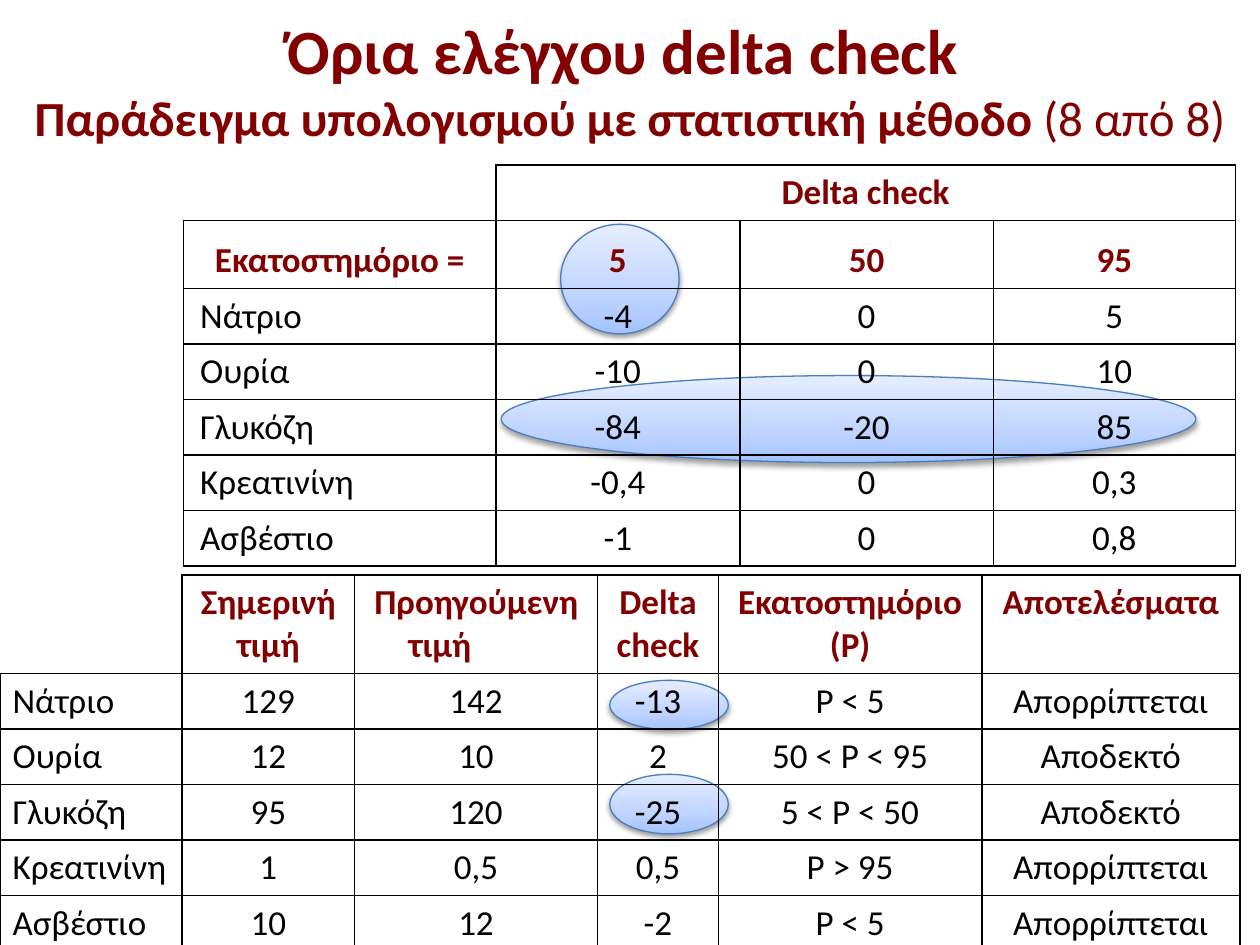
from dataclasses import dataclass

from lxml.etree import SubElement
from pptx import Presentation
from pptx.dml.color import RGBColor
from pptx.enum.shapes import MSO_SHAPE
from pptx.enum.text import MSO_ANCHOR, MSO_AUTO_SIZE, PP_ALIGN
from pptx.oxml import parse_xml
from pptx.oxml.ns import nsdecls, qn
from pptx.util import Pt


@dataclass(frozen=True)
class Theme:
    font: str = "Calibri"
    heading: str = "820000"
    text: str = "000000"
    border: str = "000000"
    outline: str = "4B7EBC"
    gradient: tuple = ((0, "A4C4FF"), (35, "BFD4FF"), (100, "E6EEFF"))
    title_size: int = 36
    subtitle_size: int = 28
    table_size: int = 20


class SlideBuilder:
    def __init__(self, slide, theme):
        self.slide = slide
        self.theme = theme

    def style(self, font, size, color, bold):
        font.name = self.theme.font
        font.size = Pt(size)
        font.bold = bold
        font.color.rgb = RGBColor.from_string(color)

    def title(self, left, top, width, height, heading, subtitle, counter):
        shape = self.slide.shapes.title
        shape.left, shape.top = Pt(left), Pt(top)
        shape.width, shape.height = Pt(width), Pt(height)
        frame = shape.text_frame
        frame.auto_size = MSO_AUTO_SIZE.NONE
        frame.vertical_anchor = MSO_ANCHOR.MIDDLE
        paragraph = frame.paragraphs[0]
        paragraph.alignment = PP_ALIGN.CENTER
        theme = self.theme
        for text, size, bold in ((heading, theme.title_size, True),
                                 (subtitle, theme.subtitle_size, True),
                                 (counter, theme.subtitle_size, False)):
            run = paragraph.add_run()
            run.text = text
            self.style(run.font, size, theme.heading, bold)
            if text == heading:
                paragraph.add_line_break()

    def highlight(self, left, top, width, height):
        """Add an ellipse with a vertical gradient and a soft shadow."""
        shape = self.slide.shapes.add_shape(
            MSO_SHAPE.OVAL, Pt(left), Pt(top), Pt(width), Pt(height))
        stops = "".join(
            f'<a:gs pos="{position * 1000}"><a:srgbClr val="{color}"/></a:gs>'
            for position, color in self.theme.gradient)
        properties = shape._element.spPr
        properties.find(qn("a:prstGeom")).addnext(parse_xml(
            f'<a:gradFill {nsdecls("a")} rotWithShape="1"><a:gsLst>{stops}</a:gsLst>'
            '<a:lin ang="16200000" scaled="0"/></a:gradFill>'))
        shape.line.color.rgb = RGBColor.from_string(self.theme.outline)
        shape.line.width = Pt(0.75)
        properties.append(parse_xml(
            f'<a:effectLst {nsdecls("a")}><a:outerShdw blurRad="{Pt(3.1)}" '
            f'dist="{Pt(1.6)}" dir="5400000" rotWithShape="0"><a:srgbClr val="000000">'
            '<a:alpha val="38000"/></a:srgbClr></a:outerShdw></a:effectLst>'))

    def borders(self, cell, hidden=()):
        properties = cell._tc.get_or_add_tcPr()
        for index, side in enumerate(("lnL", "lnR", "lnT", "lnB")):
            line = SubElement(properties, qn(f"a:{side}"), w=str(Pt(1)))
            if side in hidden:
                SubElement(line, qn("a:noFill"))
            else:
                fill = SubElement(line, qn("a:solidFill"))
                SubElement(fill, qn("a:srgbClr"), val=self.theme.border)
            properties.insert(index, line)

    def table(self, left, top, widths, heights, rows, header_rows, margin):
        """Add a grid whose top left corner cell is open and whose labels are in column one."""
        table = self.slide.shapes.add_table(
            len(rows), len(widths), Pt(left), Pt(top),
            Pt(sum(widths)), Pt(sum(heights))).table
        table.first_row = table.horz_banding = False
        for column, width in zip(table.columns, widths):
            column.width = Pt(width)
        for row, height in zip(table.rows, heights):
            row.height = Pt(height)
        for row_index, values in enumerate(rows):
            header = row_index < header_rows
            color = self.theme.heading if header else self.theme.text
            for column_index, value in enumerate(values):
                cell = table.cell(row_index, column_index)
                cell.fill.background()
                corner = row_index == column_index == 0
                self.borders(cell, ("lnL", "lnT") if corner else ())
                cell.margin_left = cell.margin_right = Pt(margin)
                cell.vertical_anchor = MSO_ANCHOR.BOTTOM
                cell.text_frame.text = value
                paragraph = cell.text_frame.paragraphs[0]
                label = column_index == 0 and not header
                paragraph.alignment = PP_ALIGN.LEFT if label else PP_ALIGN.CENTER
                self.style(paragraph.font, self.theme.table_size, color, header)
                for run in paragraph.runs:
                    self.style(run.font, self.theme.table_size, color, header)
        return table


def hang_second_line(cell, first, second):
    """Left-align a wrapped cell with separate starts for its two lines."""
    paragraph = cell.text_frame.paragraphs[0]
    paragraph.alignment = PP_ALIGN.LEFT
    properties = paragraph._p.get_or_add_pPr()
    properties.set("marL", str(Pt(second)))
    properties.set("indent", str(Pt(first - second)))


LIMITS = [
    ["", "Delta check", "", ""],
    ["Εκατοστημόριο =", "5", "50", "95"],
    ["Νάτριο", "-4", "0", "5"],
    ["Ουρία", "-10", "0", "10"],
    ["Γλυκόζη", "-84", "-20", "85"],
    ["Κρεατινίνη", "-0,4", "0", "0,3"],
    ["Ασβέστιο", "-1", "0", "0,8"],
]
RESULTS = [
    ["", "Σημερινή τιμή", "Προηγούμενη τιμή", "Delta check",
     "Εκατοστημόριο (P)", "Αποτελέσματα"],
    ["Νάτριο", "129", "142", "-13", "P < 5", "Απορρίπτεται"],
    ["Ουρία", "12", "10", "2", "50 < P < 95", "Αποδεκτό"],
    ["Γλυκόζη", "95", "120", "-25", "5 < P < 50", "Αποδεκτό"],
    ["Κρεατινίνη", "1", "0,5", "0,5", "P > 95", "Απορρίπτεται"],
    ["Ασβέστιο", "10", "12", "-2", "P < 5", "Απορρίπτεται"],
]
HIGHLIGHTS = [
    (348.5, 388.8, 67.7, 28.1),
    (348.5, 442.5, 67.7, 34),
    (320.4, 128.2, 67.7, 62.6),
    (286.4, 214.6, 396.9, 49.7),
]
ROW_HEIGHT = 31.7


def main():
    presentation = Presentation()
    presentation.slide_width, presentation.slide_height = Pt(720), Pt(540)
    slide = presentation.slides.add_slide(presentation.slide_layouts[5])
    builder = SlideBuilder(slide, Theme())

    for bounds in HIGHLIGHTS:
        builder.highlight(*bounds)
    builder.title(0, 9.4, 720, 71.3, "Όρια ελέγχου delta check ",
                  "Παράδειγμα υπολογισμού με στατιστική μέθοδο ", "(8 από 8)")

    limits = builder.table(
        105, 94.3, [178.3, 139.5, 144.8, 138.4],
        [ROW_HEIGHT, 38.9] + [ROW_HEIGHT] * 5, LIMITS, header_rows=2, margin=9.4)
    limits.cell(0, 1).merge(limits.cell(0, 3))

    results = builder.table(
        0, 328.7, [104.1, 98.5, 138.9, 69.1, 150.5, 147.5],
        [56] + [ROW_HEIGHT] * 5, RESULTS, header_rows=1, margin=7.2)
    hang_second_line(results.cell(0, 2), first=4.2, second=23.7)
    results.cell(0, 5).vertical_anchor = MSO_ANCHOR.TOP

    presentation.save("out.pptx")


if __name__ == "__main__":
    main()
